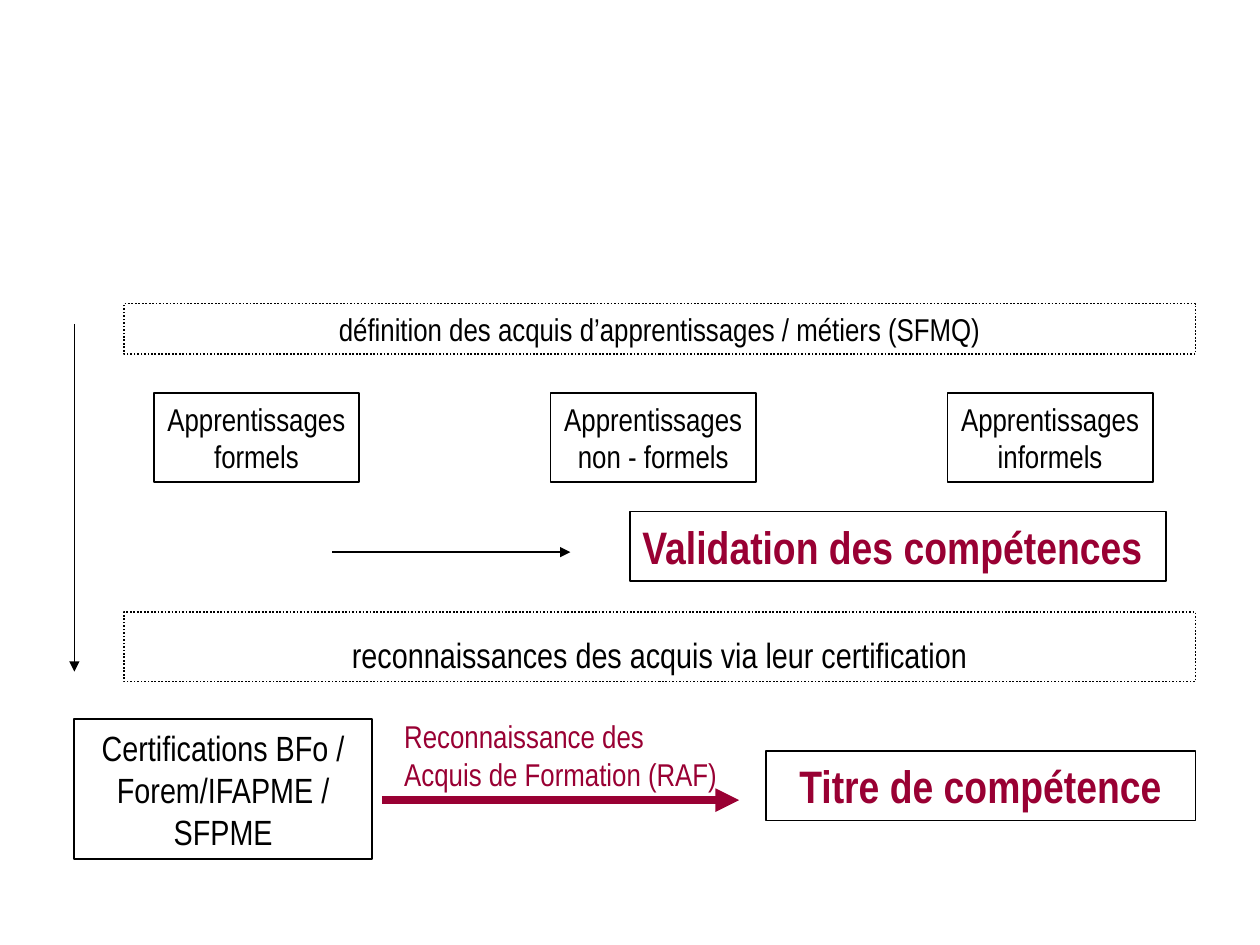
from dataclasses import dataclass
from lxml.etree import SubElement
from pptx import Presentation
from pptx.dml.color import RGBColor
from pptx.enum.dml import MSO_LINE
from pptx.enum.shapes import MSO_CONNECTOR, MSO_SHAPE
from pptx.enum.text import MSO_ANCHOR, PP_ALIGN
from pptx.oxml.ns import qn
from pptx.util import Cm, Pt


@dataclass(frozen=True)
class Theme:
    """Colours, font and type sizes of the slide."""
    ink: RGBColor = RGBColor(0x00, 0x00, 0x00)
    accent: RGBColor = RGBColor(0x99, 0x00, 0x33)
    font: str = "Arial Narrow"
    small: int = 18
    medium: int = 20
    large: int = 26


THEME = Theme()


def write(shape, text, size, color=THEME.ink, bold=False, align=PP_ALIGN.CENTER):
    """Set the text of a shape and format every run."""
    frame = shape.text_frame
    frame.word_wrap = True
    frame.text = text
    for para in frame.paragraphs:
        para.alignment = align
        for run in para.runs:
            run.font.name = THEME.font
            run.font.size = Pt(size)
            run.font.bold = bold
            run.font.color.rgb = color


def add_box(page, left, top, width, height, dotted=False):
    """Add an unfilled rectangle with a thin outline."""
    box = page.shapes.add_shape(
        MSO_SHAPE.RECTANGLE, Cm(left), Cm(top), Cm(width), Cm(height))
    box.shadow.inherit = False
    box.fill.background()
    box.line.color.rgb = THEME.ink
    box.line.width = Pt(1)
    if dotted:
        box.line.dash_style = MSO_LINE.ROUND_DOT
    return box


def add_arrow(page, start, end, color=THEME.ink, weight=0.75):
    """Add a straight arrow between two points."""
    arrow = page.shapes.add_connector(
        MSO_CONNECTOR.STRAIGHT, *(Cm(value) for value in (*start, *end)))
    arrow.line.color.rgb = color
    arrow.line.width = Pt(weight)
    SubElement(arrow.line._get_or_add_ln(), qn("a:tailEnd"), type="triangle")
    SubElement(arrow._element.spPr, qn("a:effectLst"))


def add_band(page, left, top, width, height, text, size):
    """Add a dotted band with centred text."""
    band = add_box(page, left, top, width, height, dotted=True)
    write(band, text, size)
    return band


def add_learning_row(page, left, top, width, height):
    """Spread the three kinds of learning evenly over a row."""
    kinds = ("formels", "non - formels", "informels")
    box_width = 4.14
    pitch = (width - box_width) / (len(kinds) - 1)
    for index, kind in enumerate(kinds):
        box = add_box(page, left + index * pitch, top, box_width, height)
        write(box, f"Apprentissages\n{kind}", THEME.small)
        box.text_frame.word_wrap = False


def add_validation(page, left, top, width, height):
    """Add the arrow and the validation box it points to."""
    box_width = 10.8
    middle = top + 0.82
    add_arrow(page, (left, middle), (left + 4.8, middle))
    box = add_box(page, left + width - box_width, top, box_width, height)
    write(box, "Validation des compétences", THEME.large, THEME.accent,
          bold=True, align=PP_ALIGN.LEFT)


def add_certification(page, left, top, width, height):
    """Add the certifications, the recognition arrow and the final title."""
    source = add_box(page, left, top, 6, height)
    write(source, "Certifications BFo / Forem/IFAPME / SFPME", THEME.medium)
    middle = top + 1.63
    add_arrow(page, (left + 6.2, middle), (left + 13.4, middle), THEME.accent, 4.5)
    title_width = 8.66
    title = add_box(page, left + width - title_width, top + 0.64, title_width, 1.4)
    write(title, "Titre de compétence", THEME.large, THEME.accent, bold=True)
    label = page.shapes.add_textbox(
        Cm(left + 6.4), Cm(top - 0.17), Cm(7), Cm(1.8))
    write(label, "Reconnaissance des Acquis de Formation (RAF)",
          THEME.small, THEME.accent, align=PP_ALIGN.LEFT)


def main():
    """Build and save the slide."""
    deck = Presentation()
    deck.slide_width, deck.slide_height = Cm(25.4), Cm(19.05)
    page = deck.slides.add_slide(deck.slide_layouts[6])
    add_arrow(page, (1.5, 6.53), (1.5, 13.54))
    add_band(page, 2.5, 6.12, 21.6, 1.02,
             "définition des acquis d’apprentissages / métiers (SFMQ)", THEME.small)
    add_learning_row(page, 3.1, 7.92, 20.14, 1.8)
    add_validation(page, 6.7, 10.31, 16.8, 1.4)
    recognition = add_band(page, 2.5, 12.34, 21.6, 1.4,
                           "reconnaissances des acquis via leur certification",
                           THEME.medium)
    recognition.text_frame.vertical_anchor = MSO_ANCHOR.BOTTOM
    add_certification(page, 1.5, 14.5, 22.6, 2.82)
    deck.save("out.pptx")


if __name__ == "__main__":
    main()
